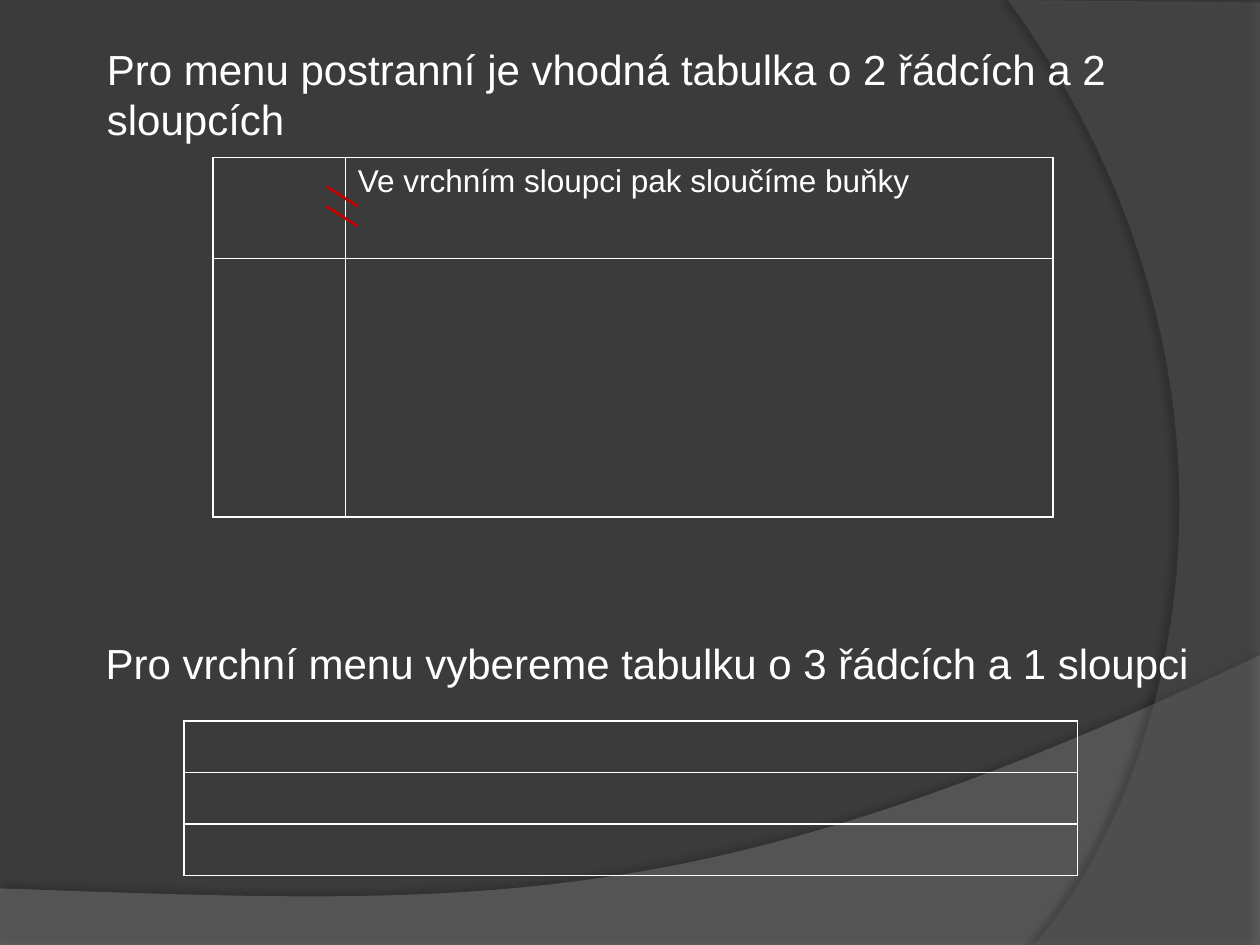
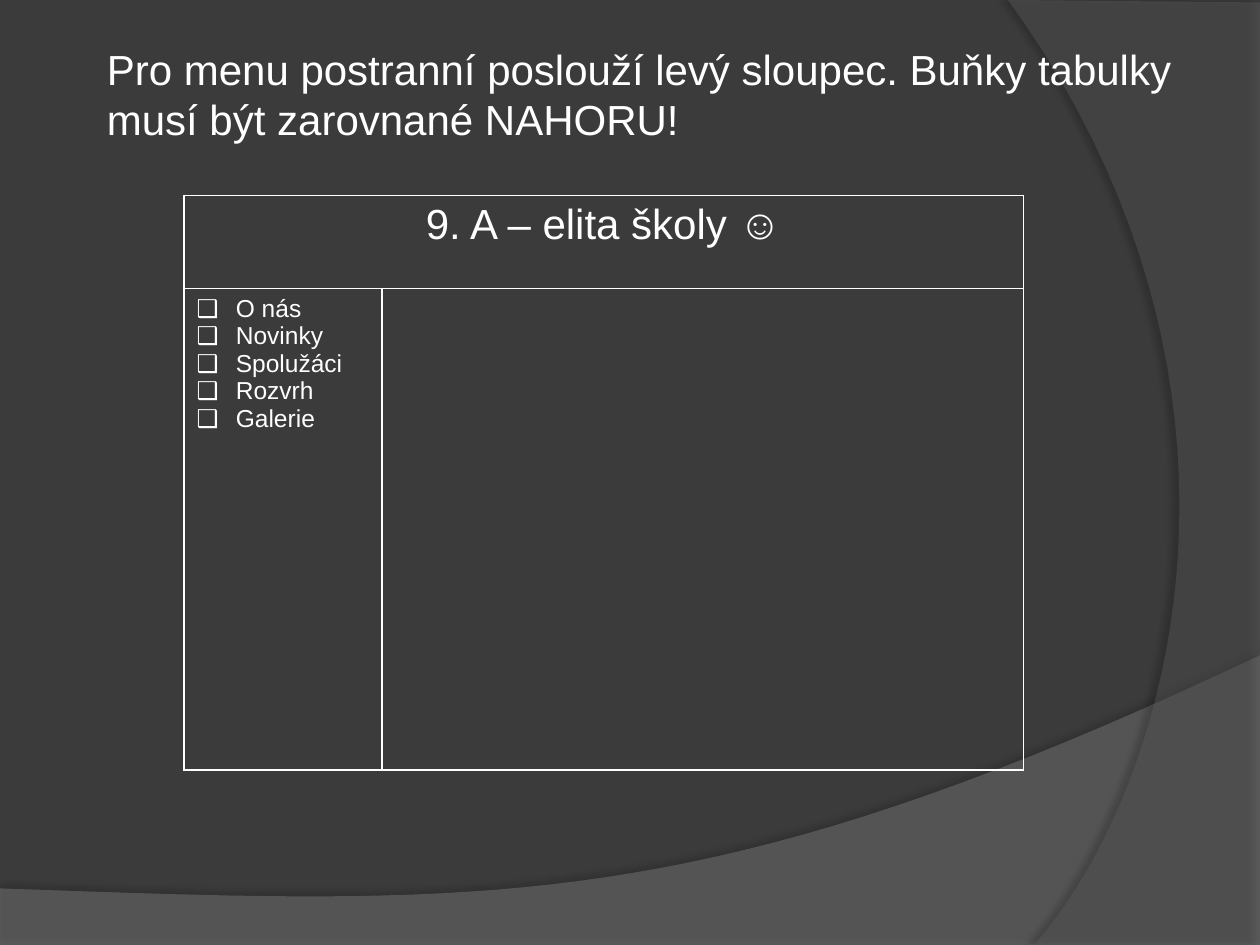
import lxml.etree
import pptx
import pptx.dml.color
import pptx.enum.shapes
import pptx.enum.text
import pptx.oxml.ns
import pptx.util

Cm = pptx.util.Cm
Pt = pptx.util.Pt
qn = pptx.oxml.ns.qn
Align = pptx.enum.text.PP_ALIGN

FONT = "Arial"
COLORS = {
    "background": "3B3B3B",
    "lower_band": "7F7F7F",
    "right_band": "5E5E5E",
    "shadow": "000000",
    "text": "FFFFFF",
    "border": "FFFFFF",
    "mark": "C00000",
}
BANDS = [
    {"color": "lower_band", "opacity": 45, "shadow_opacity": 35, "distance": 3.5, "direction": 270,
     "corners": [(0, 17.91), (0, 19.08), (25.4, 19.08), (25.4, 13.21)],
     "curve": [(14.2, 18.52), (9.93, 18.26), (0, 17.91)]},
    {"color": "right_band", "opacity": 40, "shadow_opacity": 45, "distance": 4, "direction": 180,
     "corners": [(25.4, 0.05), (25.4, 19.05), (20.85, 19.05)],
     "curve": [(23.75, 15.72), (25.86, 7.62), (20.32, 0)]},
]
CURVE_STEPS = 40
SHADOW_BLUR = 4
TITLE_BOX = (1.9, 0.74, 22.61, 2.31)
TOP_MENU_BOX = (1.88, 12.73, 22.38, 1.27)
TOP_MENU_TEXT = "Pro vrchní menu vybereme tabulku o 3 řádcích a 1 sloupci"
MENU_ITEMS = ["O nás", "Novinky", "Spolužáci", "Rozvrh", "Galerie"]
MARK_START = (6.58, 3.76)
MARK_SIZE = (0.63, 0.4)
MARK_COUNT = 2

SLIDES = [
    {"title": "Pro menu postranní je vhodná tabulka o 2 řádcích a 2 sloupcích",
     "tables": [
         {"at": (4.29, 3.18), "columns": [2.67, 14.27], "rows": [2.03, 5.21],
          "texts": {(0, 1): {"text": "Ve vrchním sloupci pak sloučíme buňky", "size": 18}}},
         {"at": (3.71, 14.53), "columns": [18.01], "rows": [1.04] * 3},
     ]},
    {"title": "Pro menu postranní poslouží levý sloupec. Buňky tabulky musí být zarovnané NAHORU!",
     "tables": [
         {"at": (3.71, 3.94), "columns": [3.99, 12.93], "rows": [1.88, 9.7],
          "merge": ((0, 0), (0, 1)),
          "texts": {(0, 0): {"text": "9. A – elita školy ☺", "align": Align.CENTER},
                    (1, 0): {"text": "\n".join(MENU_ITEMS), "size": 14, "bullet": "❑"}}},
     ]},
]


def rgb(name):
    return pptx.dml.color.RGBColor.from_string(COLORS[name])


def lengths(values):
    return [Cm(value) for value in values]


def add_child(parent, tag, **attributes):
    return lxml.etree.SubElement(parent, qn(tag), {key: str(value) for key, value in attributes.items()})


def write_text(frame, text, size=24, color="text", align=Align.LEFT, bullet=None, indent=0.79):
    frame.text = text
    for paragraph in frame.paragraphs:
        paragraph.alignment = align
        if bullet:
            properties = paragraph._p.get_or_add_pPr()
            properties.set("marL", str(Cm(indent)))
            properties.set("indent", str(-Cm(indent)))
            add_child(properties, "a:buFont", typeface=FONT)
            add_child(properties, "a:buChar", char=bullet)
        for run in paragraph.runs:
            run.font.name = FONT
            run.font.size = Pt(size)
            run.font.color.rgb = rgb(color)


def curve_points(start, first, second, end):
    for step in range(1, CURVE_STEPS + 1):
        t = step / CURVE_STEPS
        weights = ((1 - t) ** 3, 3 * t * (1 - t) ** 2, 3 * t * t * (1 - t), t ** 3)
        yield tuple(sum(weight * point[axis] for weight, point in zip(weights, (start, first, second, end)))
                    for axis in (0, 1))


def build_band(slide, band):
    corners = band["corners"]
    outline = corners + list(curve_points(corners[-1], *band["curve"]))
    points = [lengths(point) for point in outline]
    builder = slide.shapes.build_freeform(*points[0])
    builder.add_line_segments(points[1:], close=True)
    shape = builder.convert_to_shape()
    shape.fill.solid()
    shape.fill.fore_color.rgb = rgb(band["color"])
    shape.line.fill.background()
    shape.shadow.inherit = False
    properties = shape.element.spPr
    add_child(properties.find(qn("a:solidFill"))[0], "a:alpha", val=band["opacity"] * 1000)
    shadow = add_child(properties.find(qn("a:effectLst")), "a:outerShdw", blurRad=Pt(SHADOW_BLUR),
                       dist=Pt(band["distance"]), dir=band["direction"] * 60000, algn="ctr", rotWithShape=0)
    color = add_child(shadow, "a:srgbClr", val=COLORS["shadow"])
    add_child(color, "a:alpha", val=band["shadow_opacity"] * 1000)
    return shape


def format_master(master, slide):
    master.background.fill.solid()
    master.background.fill.fore_color.rgb = rgb("background")
    for position, band in enumerate(BANDS, start=2):
        master.shapes.element.insert(position, build_band(slide, band).element)


def add_title(slide, text):
    title = slide.shapes.title
    title.left, title.top, title.width, title.height = lengths(TITLE_BOX)
    frame = title.text_frame
    frame.word_wrap = True
    frame.auto_size = pptx.enum.text.MSO_AUTO_SIZE.NONE
    frame.vertical_anchor = pptx.enum.text.MSO_ANCHOR.TOP
    write_text(frame, text)


def format_cell(cell):
    cell.fill.background()
    properties = cell._tc.get_or_add_tcPr()
    for position, side in enumerate(("a:lnL", "a:lnR", "a:lnT", "a:lnB")):
        border = add_child(properties, side, w=Pt(1))
        add_child(add_child(border, "a:solidFill"), "a:srgbClr", val=COLORS["border"])
        properties.insert(position, border)


def add_table(slide, at, columns, rows, texts=None, merge=None):
    table = slide.shapes.add_table(len(rows), len(columns), *lengths(at),
                                   Cm(sum(columns)), Cm(sum(rows))).table
    table.first_row = table.horz_banding = False
    for column, width in zip(table.columns, columns):
        column.width = Cm(width)
    for row, height in zip(table.rows, rows):
        row.height = Cm(height)
    for cell in table.iter_cells():
        format_cell(cell)
    if merge:
        first, last = merge
        table.cell(*first).merge(table.cell(*last))
    for place, content in (texts or {}).items():
        write_text(table.cell(*place).text_frame, **content)


def add_merge_marks(slide):
    left, top = MARK_START
    width, height = MARK_SIZE
    for index in range(MARK_COUNT):
        start = top + index * height
        mark = slide.shapes.add_connector(pptx.enum.shapes.MSO_CONNECTOR.STRAIGHT,
                                          *lengths((left, start, left + width, start + height)))
        mark.line.color.rgb = rgb("mark")
        mark.line.width = Pt(1.5)
        add_child(mark.element.spPr, "a:effectLst")


def add_top_menu_text(slide):
    frame = slide.shapes.add_textbox(*lengths(TOP_MENU_BOX)).text_frame
    frame.word_wrap = False
    write_text(frame, TOP_MENU_TEXT)


def main():
    presentation = pptx.Presentation()
    presentation.slide_width, presentation.slide_height = lengths((25.4, 19.05))
    layout = presentation.slide_layouts.get_by_name("Title Only")
    for content in SLIDES:
        slide = presentation.slides.add_slide(layout)
        add_title(slide, content["title"])
        for table in content["tables"]:
            add_table(slide, **table)
    first_slide = presentation.slides[0]
    format_master(presentation.slide_master, first_slide)
    add_top_menu_text(first_slide)
    add_merge_marks(first_slide)
    presentation.save("out.pptx")


if __name__ == "__main__":
    main()
